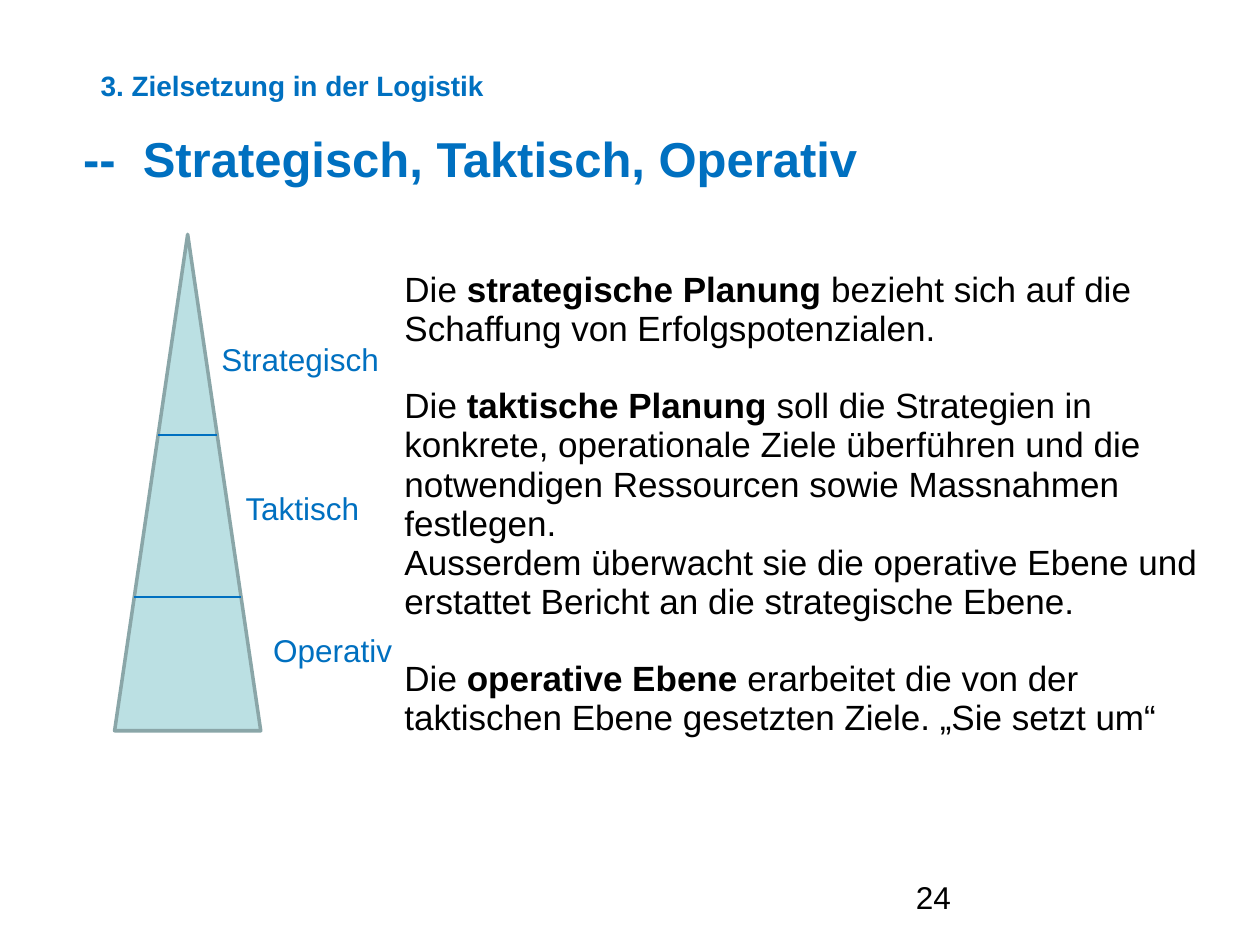
from lxml.etree import SubElement
from pptx import Presentation
from pptx.dml.color import RGBColor
from pptx.enum.shapes import MSO_CONNECTOR as CONN, MSO_SHAPE as SHAPE
from pptx.enum.text import MSO_ANCHOR as ANCHOR, MSO_AUTO_SIZE as FIT, PP_ALIGN as ALIGN
from pptx.oxml.ns import qn
from pptx.util import Inches, Pt

BLUE = RGBColor(0x00, 0x70, 0xC0)
BLACK = RGBColor(0x00, 0x00, 0x00)
TEAL = RGBColor(0xBB, 0xE0, 0xE3)
EDGE = RGBColor(0x8A, 0xA6, 0xA8)

LEVELS = [
    ("Strategisch", (1.66, 2.65, 1.46, 0.39)),
    ("Taktisch", (1.85, 3.83, 1.11, 0.39)),
    ("Operativ", (2.07, 4.96, 1.16, 0.39)),
]
DIVIDERS = [3.45, 4.74]
PLANNING = [
    (0, [("Die ", False), ("strategische Planung", True), (" bezieht sich auf die", False)]),
    (0, [("Schaffung von Erfolgspotenzialen.", False)]),
    (22, [("Die ", False), ("taktische Planung", True),
          (" soll die Strategien in konkrete, operationale Ziele überführen und die "
           "notwendigen Ressourcen sowie Massnahmen festlegen.", False)]),
    (0, [("Ausserdem überwacht sie die operative Ebene und erstattet Bericht "
          "an die strategische Ebene.", False)]),
    (22, [("Die ", False), ("operative Ebene ", True),
          ("erarbeitet die von der taktischen Ebene gesetzten Ziele. „Sie setzt um“", False)]),
]


def place(sp, box):
    """Move a shape to a box given in inches."""
    for name, value in zip(("left", "top", "width", "height"), box):
        setattr(sp, name, Inches(value))


def set_font(font, size, color, bold=False):
    """Apply the slide's typeface with the given size, colour and weight."""
    for name, value in {"name": "Arial", "size": Pt(size), "bold": bold}.items():
        setattr(font, name, value)
    font.color.rgb = color


def format_frame(tf, anchor=ANCHOR.TOP, wrap=True):
    """Set the wrapping and anchoring of a text frame."""
    fmt = {"auto_size": FIT.NONE, "vertical_anchor": anchor, "word_wrap": wrap}
    for name, value in fmt.items():
        setattr(tf, name, value)


def add_label(shapes, box, text, size, color, bold=False, spacing=1.0, wrap=False):
    """Add a one-line text box."""
    tf = shapes.add_textbox(*map(Inches, box)).text_frame
    format_frame(tf, wrap=wrap)
    p = tf.paragraphs[0]
    p.line_spacing = spacing
    r = p.add_run()
    r.text = text
    set_font(r.font, size, color, bold)


def add_title(slide, box):
    """Fill the title placeholder."""
    sp = slide.shapes.title
    place(sp, box)
    tf = sp.text_frame
    format_frame(tf, ANCHOR.MIDDLE)
    p = tf.paragraphs[0]
    p.alignment = ALIGN.LEFT
    r = p.add_run()
    r.text = "--  Strategisch, Taktisch, Operativ"
    set_font(r.font, 28, BLUE, True)


def add_planning_text(slide, box):
    """Fill the body placeholder with the planning paragraphs."""
    sp = slide.placeholders[1]
    place(sp, box)
    tf = sp.text_frame
    format_frame(tf)
    for i, (before, runs) in enumerate(PLANNING):
        p = tf.paragraphs[0] if i == 0 else tf.add_paragraph()
        fmt = {"line_spacing": 0.93, "space_before": Pt(before), "alignment": ALIGN.LEFT}
        for name, value in fmt.items():
            setattr(p, name, value)
        pPr = p._p.get_or_add_pPr()
        pPr.set("marL", "0")
        pPr.set("indent", "0")
        SubElement(pPr, qn("a:buNone"))
        for text, bold in runs:
            r = p.add_run()
            r.text = text
            set_font(r.font, 20, BLACK, bold)


def add_pyramid(slide, box):
    """Draw the pyramid with its dividers and level labels as one group."""
    shapes = slide.shapes.add_group_shape().shapes
    left, top, width, height = box
    sp = shapes.add_shape(SHAPE.ISOSCELES_TRIANGLE, *map(Inches, box))
    sp.shadow.inherit = False
    sp.fill.solid()
    sp.fill.fore_color.rgb = TEAL
    sp.line.color.rgb = EDGE
    sp.line.width = Pt(2)
    center = left + width / 2
    for y in DIVIDERS:
        half = width / 2 * (y - top) / height
        line = shapes.add_connector(CONN.STRAIGHT, *map(Inches, (center - half, y, center + half, y)))
        line.line.color.rgb = BLUE
        line.line.width = Pt(1)
        SubElement(line._element.spPr, qn("a:effectLst"))
    for text, label_box in LEVELS:
        add_label(shapes, label_box, text, 18, BLUE)


def main():
    """Build and save the slide."""
    prs = Presentation()
    prs.slide_width, prs.slide_height = Inches(10), Inches(7.5)
    slide = prs.slides.add_slide(prs.slide_layouts[1])
    add_label(slide.shapes, (7.17, 6.95, 2.33, 0.4), "24", 18, BLACK, spacing=0.93, wrap=True)
    add_title(slide, (0.56, 0.97, 8.35, 0.57))
    add_label(slide.shapes, (0.7, 0.52, 3.28, 0.35), "3. Zielsetzung in der Logistik",
              16, BLUE, bold=True, spacing=0.93)
    add_planning_text(slide, (3.11, 2.1, 6.69, 3.86))
    add_pyramid(slide, (0.91, 1.86, 1.16, 3.94))
    prs.save("out.pptx")


if __name__ == "__main__":
    main()
